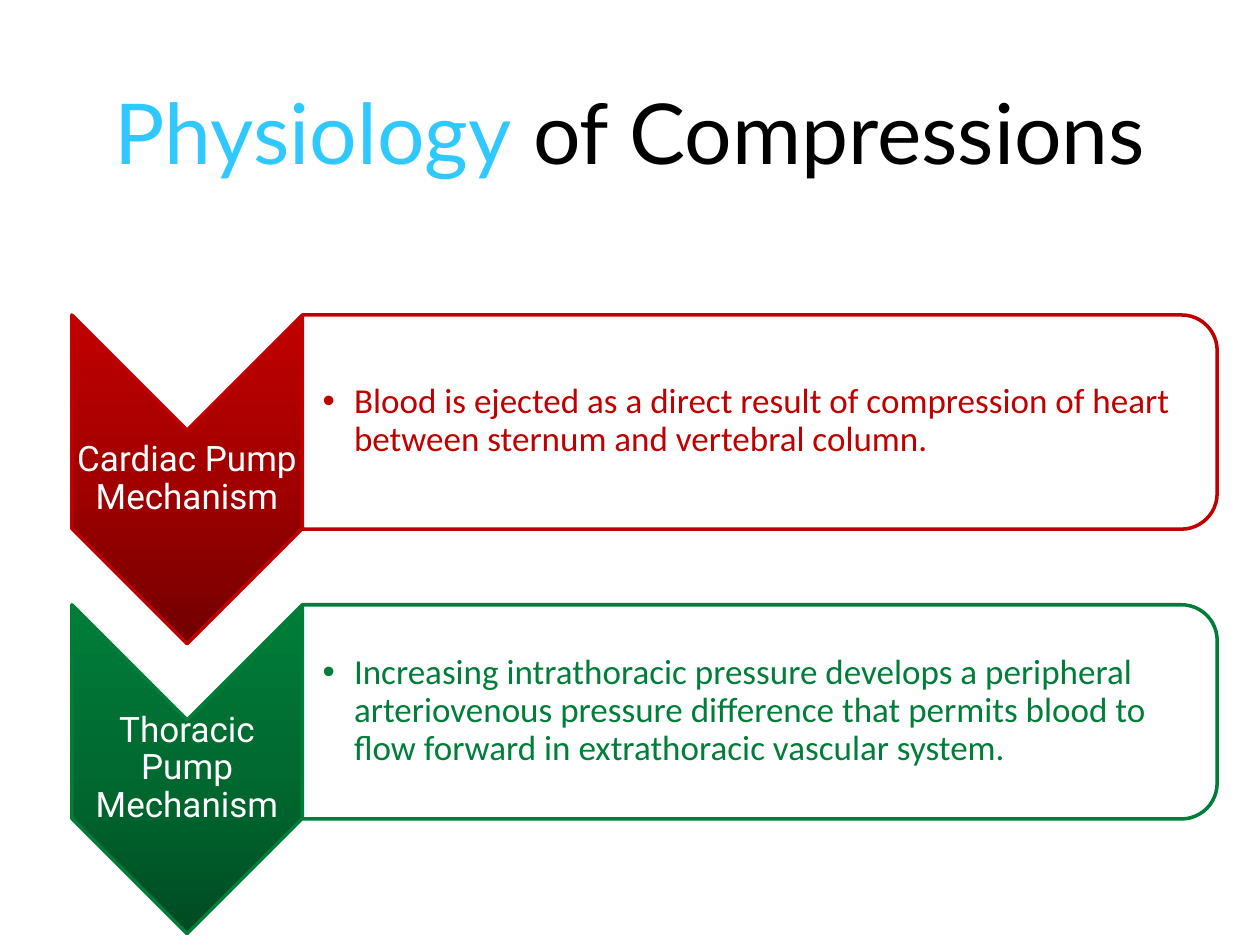
from dataclasses import dataclass

from lxml.etree import SubElement
from pptx import Presentation
from pptx.dml.color import RGBColor
from pptx.enum.shapes import MSO_SHAPE as Preset
from pptx.enum.text import MSO_ANCHOR as Anchor, PP_ALIGN as Align
from pptx.oxml import parse_xml
from pptx.oxml.ns import nsdecls, qn
from pptx.util import Inches, Pt


@dataclass(frozen=True)
class Theme:
    accent: str = "2FC9FF"
    dark: str = "000000"
    light: str = "FFFFFF"
    title_font: str = "Lato"
    label_font: str = "Roboto"
    body_font: str = "Calibri"
    title_size: int = 48
    body_size: int = 20
    outline: int = 2


@dataclass(frozen=True)
class Mechanism:
    label: str
    detail: str
    color: str
    middle: str
    deep: str


@dataclass(frozen=True)
class Area:
    left: float
    top: float
    width: float
    height: float


THEME = Theme()
MECHANISMS = [
    Mechanism("Cardiac Pump Mechanism",
              "Blood is ejected as a direct result of compression of heart "
              "between sternum and vertebral column.",
              "C00000", "A20000", "720000"),
    Mechanism("Thoracic Pump Mechanism",
              "Increasing intrathoracic pressure develops a peripheral "
              "arteriovenous pressure difference that permits blood to "
              "flow forward in extrathoracic vascular system.",
              "007E39", "006A30", "004B22"),
]
FIRST_TOP, ROW_PITCH = 2.5, 2.3
CHEVRON_LEFT, CHEVRON_WIDTH, CHEVRON_HEIGHT = 0.57, 1.83, 2.61
PANEL_LEFT, PANEL_WIDTH, PANEL_HEIGHT = 2.4, 7.26, 1.7


def rgb(color: str) -> RGBColor:
    return RGBColor.from_string(color)


def add_span(para, text: str, *, font: str, size: int, color: str) -> None:
    span = para.add_run()
    span.text = text
    span.font.name = font
    span.font.size = Pt(size)
    span.font.color.rgb = rgb(color)


def add_turned_shape(page, preset, area: Area, color: str):
    """Add a shape turned a quarter clockwise that fills the area as seen."""
    shift = (area.width - area.height) / 2
    shape = page.shapes.add_shape(
        preset, Inches(area.left + shift), Inches(area.top - shift),
        Inches(area.height), Inches(area.width))
    shape.rotation = 90
    shape.shadow.inherit = False
    shape.line.color.rgb = rgb(color)
    shape.line.width = Pt(THEME.outline)
    return shape


def fill_gradient(shape, colors: list[str]) -> None:
    """Blend evenly spaced colours from bottom to top, ignoring the rotation."""
    step = 100000 // (len(colors) - 1)
    stops = "".join(f'<a:gs pos="{index * step}"><a:srgbClr val="{color}"/></a:gs>'
                    for index, color in enumerate(colors))
    gradient = parse_xml(
        f'<a:gradFill {nsdecls("a")} rotWithShape="0"><a:gsLst>{stops}</a:gsLst>'
        '<a:lin ang="16200000" scaled="0"/></a:gradFill>')
    shape._element.spPr.find(qn("a:prstGeom")).addnext(gradient)


def add_text(page, area: Area, text: str, *, font: str, color: str,
             align=Align.LEFT, inset: float = 0.01, bullet: bool = False) -> None:
    box = page.shapes.add_textbox(Inches(area.left), Inches(area.top),
                                  Inches(area.width), Inches(area.height))
    frame = box.text_frame
    frame.word_wrap = True
    frame.vertical_anchor = Anchor.MIDDLE
    frame.margin_left = Inches(inset)
    frame.margin_right = frame.margin_top = frame.margin_bottom = Inches(0.01)
    para = frame.paragraphs[0]
    para.alignment = align
    para.line_spacing = 0.9
    if bullet:
        props = para._p.get_or_add_pPr()
        props.set("marL", str(Inches(0.25)))
        props.set("indent", str(-Inches(0.25)))
        SubElement(props, qn("a:buFont"), typeface="Arial")
        SubElement(props, qn("a:buChar"), char="•")
    add_span(para, text, font=font, size=THEME.body_size, color=color)


def add_title(page) -> None:
    title = page.shapes.title
    title.left, title.top = Inches(0), Inches(0.41)
    title.width, title.height = Inches(10), Inches(1.26)
    title.text_frame.vertical_anchor = Anchor.MIDDLE
    para = title.text_frame.paragraphs[0]
    para.alignment = Align.CENTER
    for text, color in (("Physiology", THEME.accent),
                        (" of Compressions", THEME.dark)):
        add_span(para, text, font=THEME.title_font, size=THEME.title_size, color=color)


def add_mechanism(page, item: Mechanism, top: float) -> None:
    # Downward chevron with its label
    chevron = add_turned_shape(
        page, Preset.CHEVRON,
        Area(CHEVRON_LEFT, top, CHEVRON_WIDTH, CHEVRON_HEIGHT), item.color)
    fill_gradient(chevron, [item.deep, item.middle, item.color])
    add_text(page, Area(CHEVRON_LEFT, top + 0.91, CHEVRON_WIDTH, 0.78), item.label,
             font=THEME.label_font, color=THEME.light, align=Align.CENTER)

    # Panel rounded on the right with its explanation
    panel = add_turned_shape(
        page, Preset.ROUND_2_SAME_RECTANGLE,
        Area(PANEL_LEFT, top, PANEL_WIDTH, PANEL_HEIGHT), item.color)
    panel.fill.solid()
    panel.fill.fore_color.rgb = rgb(THEME.light)
    add_text(page, Area(PANEL_LEFT, top + 0.08, 7.18, 1.53), item.detail,
             font=THEME.body_font, color=item.color, inset=0.16, bullet=True)


def main() -> None:
    deck = Presentation()
    deck.slide_width, deck.slide_height = Inches(10), Inches(7.5)
    page = deck.slides.add_slide(deck.slide_layouts[5])
    add_title(page)
    for index, item in enumerate(MECHANISMS):
        add_mechanism(page, item, FIRST_TOP + index * ROW_PITCH)
    deck.save("out.pptx")


if __name__ == "__main__":
    main()
